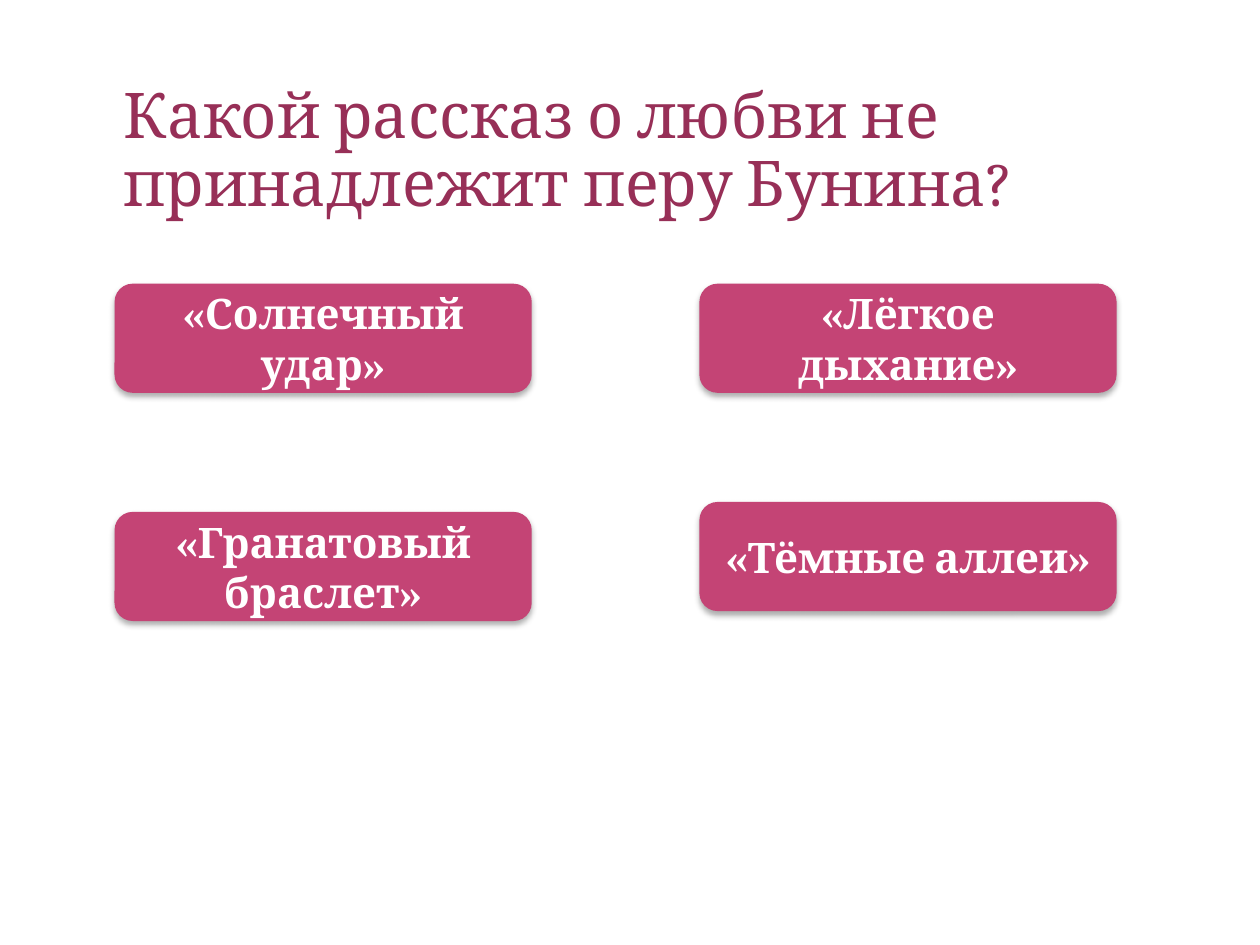
from lxml import etree
from pptx import Presentation
from pptx.dml.color import RGBColor
from pptx.enum.shapes import MSO_SHAPE
from pptx.enum.text import MSO_ANCHOR, MSO_AUTO_SIZE, PP_ALIGN
from pptx.oxml.ns import qn
from pptx.util import Cm, Pt

ROUNDED = MSO_SHAPE.ROUNDED_RECTANGLE
BOTTOM, MIDDLE = MSO_ANCHOR.BOTTOM, MSO_ANCHOR.MIDDLE
LEFT, CENTER = PP_ALIGN.LEFT, PP_ALIGN.CENTER
NO_AUTOFIT = MSO_AUTO_SIZE.NONE

PLUM = RGBColor(0x97, 0x2F, 0x57)
PINK = RGBColor(0xC4, 0x44, 0x75)
WHITE = RGBColor(0xFF, 0xFF, 0xFF)
BLACK = RGBColor(0x00, 0x00, 0x00)

LEFT_COLUMN, RIGHT_COLUMN = 2.31, 14.1
ANSWERS = [
    ("«Солнечный удар»", LEFT_COLUMN, 5.72),
    ("«Лёгкое дыхание»", RIGHT_COLUMN, 5.72),
    ("«Гранатовый браслет»", LEFT_COLUMN, 10.32),
    ("«Тёмные аллеи»", RIGHT_COLUMN, 10.12),
]


class QuizSlide:
    title_font = {"name": "Cambria", "size": Pt(36), "bold": False}
    answer_font = {"name": "Cambria", "size": Pt(24), "bold": True}
    answer_size = (Cm(8.41), Cm(2.2))

    def __init__(self, presentation):
        self.slide = presentation.slides.add_slide(presentation.slide_layouts[5])

    def set_text(self, shape, text, font, color, anchor, alignment):
        frame = shape.text_frame
        frame.text = text
        frame.word_wrap = True
        frame.auto_size = NO_AUTOFIT
        frame.vertical_anchor = anchor
        paragraph = frame.paragraphs[0]
        paragraph.alignment = alignment
        run_font = paragraph.runs[0].font
        for name, value in font.items():
            setattr(run_font, name, value)
        run_font.color.rgb = color
        return paragraph

    def add_shadow(self, shape):
        shape.shadow.inherit = False
        effects = shape.element.spPr.find(qn("a:effectLst"))
        shadow = etree.SubElement(
            effects, qn("a:outerShdw"), blurRad=str(Pt(3.5)), dist=str(Pt(2.2)),
            dir="5400000", rotWithShape="0")
        color = etree.SubElement(shadow, qn("a:srgbClr"), val=str(BLACK))
        etree.SubElement(color, qn("a:alpha"), val="32000")

    def title(self, text):
        shape = self.slide.shapes.title
        shape.left, shape.top = Cm(2.24), Cm(1.27)
        shape.width, shape.height = Cm(20.96), Cm(3.3)
        paragraph = self.set_text(shape, text, self.title_font, PLUM, BOTTOM, LEFT)
        paragraph.line_spacing = 0.9

    def answer(self, text, left, top):
        shape = self.slide.shapes.add_shape(
            ROUNDED, Cm(left), Cm(top), *self.answer_size)
        shape.fill.solid()
        shape.fill.fore_color.rgb = PINK
        shape.line.fill.background()
        self.add_shadow(shape)
        self.set_text(shape, text, self.answer_font, WHITE, MIDDLE, CENTER)


def main():
    presentation = Presentation()
    presentation.slide_width, presentation.slide_height = Cm(25.4), Cm(19.05)
    quiz = QuizSlide(presentation)
    quiz.title("Какой рассказ о любви не принадлежит перу Бунина?")
    for text, left, top in ANSWERS:
        quiz.answer(text, left, top)
    presentation.save("out.pptx")


if __name__ == "__main__":
    main()
